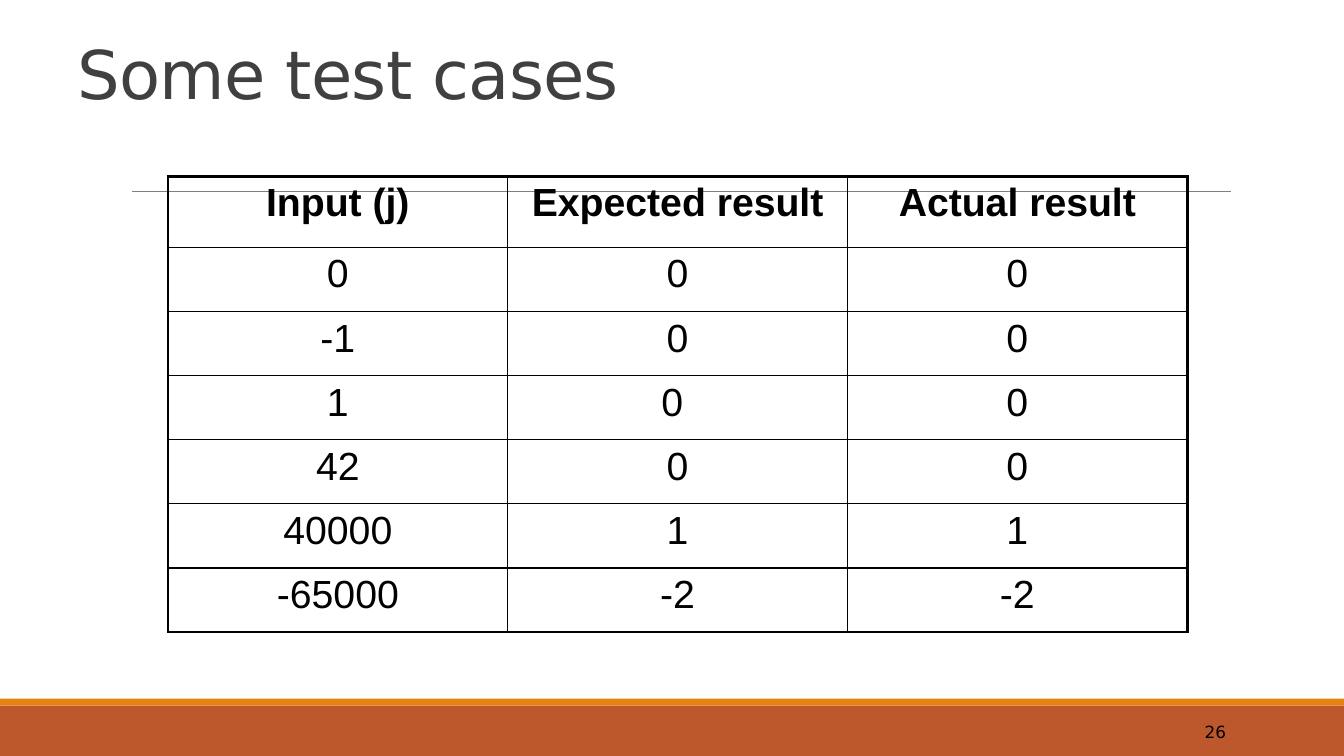
from lxml import etree
from pptx import Presentation
from pptx import util as u
from pptx.dml.color import RGBColor
from pptx.enum import shapes, text
from pptx.oxml.ns import qn

COLORS = {"rust": "BD582C", "orange": "E48312", "rule": "808080",
          "title": "404040", "ink": "000000"}
HEADING_FONT, TABLE_FONT = "DejaVu Sans", "Arial"
OUTER, INNER = 2.25, 1

TEST_CASES = [
    ("Input (j)", "Expected result", "Actual result"),
    ("0", "0", "0"),
    ("-1", "0", "0"),
    ("1", "0 ", "0"),
    ("42", "0", "0"),
    ("40000", "1", "1"),
    ("-65000", "-2", "-2"),
]


def color(name):
    return RGBColor.from_string(COLORS[name])


class TestCaseSlide:
    def __init__(self, deck):
        self.page = deck.slides.add_slide(deck.slide_layouts[5])

    def style(self, paragraph, face, size, ink, align, bold=False):
        paragraph.alignment = align
        font = paragraph.font
        font.name, font.size, font.bold = face, u.Pt(size), bold
        font.color.rgb = color(ink)

    def bar(self, left, top, width, height, fill):
        box = self.page.shapes.add_shape(
            shapes.MSO_SHAPE.RECTANGLE, *map(u.Pt, (left, top, width, height)))
        box.shadow.inherit = False
        box.fill.solid()
        box.fill.fore_color.rgb = color(fill)
        box.line.fill.background()

    def rule(self, left, right, y):
        line = self.page.shapes.add_connector(
            shapes.MSO_CONNECTOR.STRAIGHT, *map(u.Pt, (left, y, right, y)))
        line.line.color.rgb = color("rule")
        line.line.width = u.Pt(0.5)
        etree.SubElement(line._element.spPr, qn("a:effectLst"))

    def title(self, words, left, top, width, height):
        box = self.page.shapes.title
        box.left, box.top, box.width, box.height = map(
            u.Pt, (left, top, width, height))
        frame = box.text_frame
        frame.text = words
        frame.auto_size = text.MSO_AUTO_SIZE.NONE
        frame.vertical_anchor = text.MSO_ANCHOR.BOTTOM
        para = frame.paragraphs[0]
        para.line_spacing = 0.85
        self.style(para, HEADING_FONT, 48, "title", text.PP_ALIGN.LEFT)
        para.runs[0]._r.get_or_add_rPr().set("spc", "-50")

    def label(self, words, left, top, width, height):
        box = self.page.shapes.add_textbox(
            *map(u.Pt, (left, top, width, height)))
        frame = box.text_frame
        frame.word_wrap = True
        frame.vertical_anchor = text.MSO_ANCHOR.MIDDLE
        frame.text = words
        self.style(frame.paragraphs[0], HEADING_FONT, 12, "ink",
                   text.PP_ALIGN.RIGHT)

    def borders(self, cell, widths):
        properties = cell._tc.get_or_add_tcPr()
        for side, width in widths.items():
            edge = etree.SubElement(properties, qn("a:ln" + side),
                                    w=str(u.Pt(width)))
            fill = etree.SubElement(edge, qn("a:solidFill"))
            etree.SubElement(fill, qn("a:srgbClr"), val=COLORS["ink"])

    def table(self, rows, left, top, column_width, row_heights):
        last_row, last_column = len(rows) - 1, len(rows[0]) - 1
        grid = self.page.shapes.add_table(
            len(rows), len(rows[0]), u.Pt(left), u.Pt(top),
            u.Pt(column_width * len(rows[0])), u.Pt(sum(row_heights))).table
        grid.first_row = grid.horz_banding = False
        for column in grid.columns:
            column.width = u.Pt(column_width)
        for r, values in enumerate(rows):
            grid.rows[r].height = u.Pt(row_heights[r])
            for c, value in enumerate(values):
                cell = grid.cell(r, c)
                cell.text = value
                cell.margin_left = cell.margin_right = u.Pt(9.6)
                cell.margin_top = cell.margin_bottom = u.Pt(3.6)
                # Heavy frame outside, thin lines inside
                self.borders(cell, {
                    "L": OUTER if c == 0 else INNER,
                    "R": OUTER if c == last_column else INNER,
                    "T": OUTER if r == 0 else INNER,
                    "B": OUTER if r == last_row else INNER})
                cell.fill.background()
                self.style(cell.text_frame.paragraphs[0], TABLE_FONT, 28,
                           "ink", text.PP_ALIGN.CENTER, bold=r == 0)


def main():
    deck = Presentation()
    deck.slide_width, deck.slide_height = u.Pt(960), u.Pt(540)
    slide = TestCaseSlide(deck)

    # Footer bands and heading rule
    slide.bar(0, 504, 960, 36, "rust")
    slide.bar(0, 499, 960, 5, "orange")
    slide.rule(94.3, 879, 136.6)

    # Heading
    slide.title("Some test cases", 48, 21.6, 864, 62.6)

    # Test cases
    heights = [50.8] + [45.8] * (len(TEST_CASES) - 1)
    slide.table(TEST_CASES, 120, 126, 242.7, heights)

    # Page number
    slide.label("26", 779.8, 508.5, 103, 28.8)
    deck.save("out.pptx")


if __name__ == "__main__":
    main()
